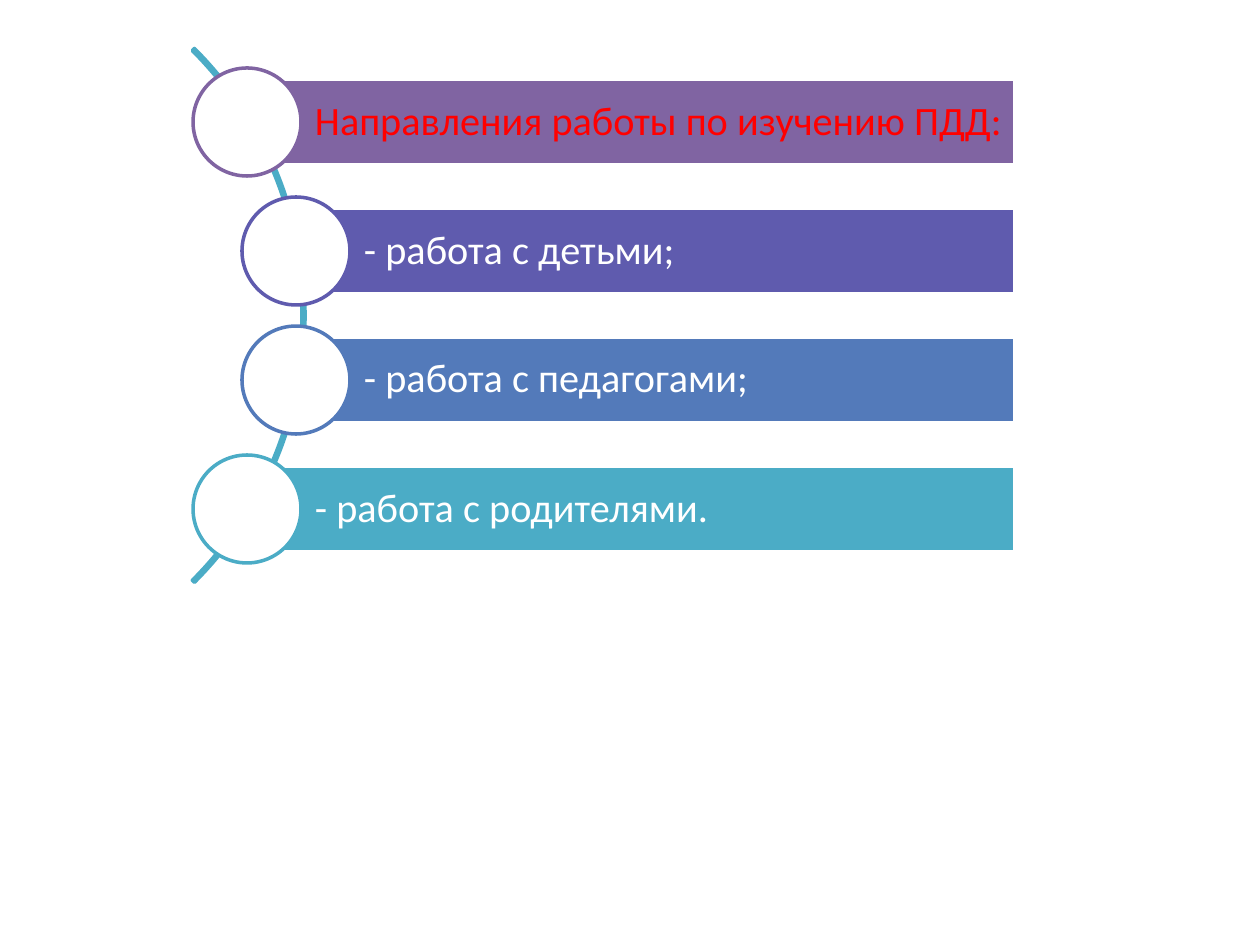
from pptx import Presentation
from pptx.dml.color import RGBColor
from pptx.enum.shapes import MSO_SHAPE
from pptx.enum.text import MSO_ANCHOR, PP_ALIGN
from pptx.util import Emu, Pt

RECT, OVAL, ARC = MSO_SHAPE.RECTANGLE, MSO_SHAPE.OVAL, MSO_SHAPE.BLOCK_ARC
MIDDLE, LEFT = MSO_ANCHOR.MIDDLE, PP_ALIGN.LEFT

WHITE = RGBColor(0xFF, 0xFF, 0xFF)
RED = RGBColor(0xFF, 0x00, 0x00)
PURPLE = RGBColor(0x80, 0x64, 0xA2)
INDIGO = RGBColor(0x5F, 0x5B, 0xAE)
BLUE = RGBColor(0x53, 0x7A, 0xBA)
TEAL = RGBColor(0x4B, 0xAC, 0xC6)

# Content: text, text colour, bar colour, left edge of the bar
ROWS = [
    ("Направления работы по изучению ПДД:", RED, PURPLE, 247),
    ("- работа с детьми;", WHITE, INDIGO, 296),
    ("- работа с педагогами;", WHITE, BLUE, 296),
    ("- работа с родителями.", WHITE, TEAL, 247),
]

# Layout in px
FIRST, PITCH = 122, 129
RIGHT, BAR = 1015, 86
DISC = 108
ARC_BOX = (-450, -62, 755, 755)


def px(num):
    return Emu(round(num * 914400 / 126))


def add(slide, kind, box, line, fill=None):
    shape = slide.shapes.add_shape(kind, *map(px, box))
    shape.shadow.inherit = False
    if fill is None:
        shape.fill.background()
    else:
        shape.fill.solid()
        shape.fill.fore_color.rgb = fill
    shape.line.color.rgb = line
    shape.line.width = Pt(2)
    return shape


def write(shape, text, color=WHITE, size=23, font="Calibri"):
    frame = shape.text_frame
    frame.word_wrap = True
    frame.vertical_anchor = MIDDLE
    frame.margin_left = px(68)
    frame.margin_right = frame.margin_top = frame.margin_bottom = px(8)
    para = frame.paragraphs[0]
    para.alignment = LEFT
    para.line_spacing = 0.9
    para.space_after = Pt(8)
    run = para.add_run()
    run.text = text
    run.font.name = font
    run.font.size = Pt(size)
    run.font.color.rgb = color


def main():
    deck = Presentation()
    deck.slide_width, deck.slide_height = px(1260), px(945)
    slide = deck.slides.add_slide(deck.slide_layouts[6])

    # Arc behind the rows, from 315 to 45 degrees
    arc = add(slide, ARC, ARC_BOX, TEAL)
    for i, value in enumerate((189, 27, 0.004)):
        arc.adjustments[i] = value

    # Bars, each with a disc centred on its left edge
    for i, (text, ink, tint, left) in enumerate(ROWS):
        mid = FIRST + i * PITCH
        bar = add(slide, RECT, (left, mid - BAR / 2, RIGHT - left, BAR),
                  WHITE, tint)
        write(bar, text, color=ink)
        add(slide, OVAL, (left - DISC / 2, mid - DISC / 2, DISC, DISC),
            tint, WHITE)

    deck.save("out.pptx")


if __name__ == "__main__":
    main()
